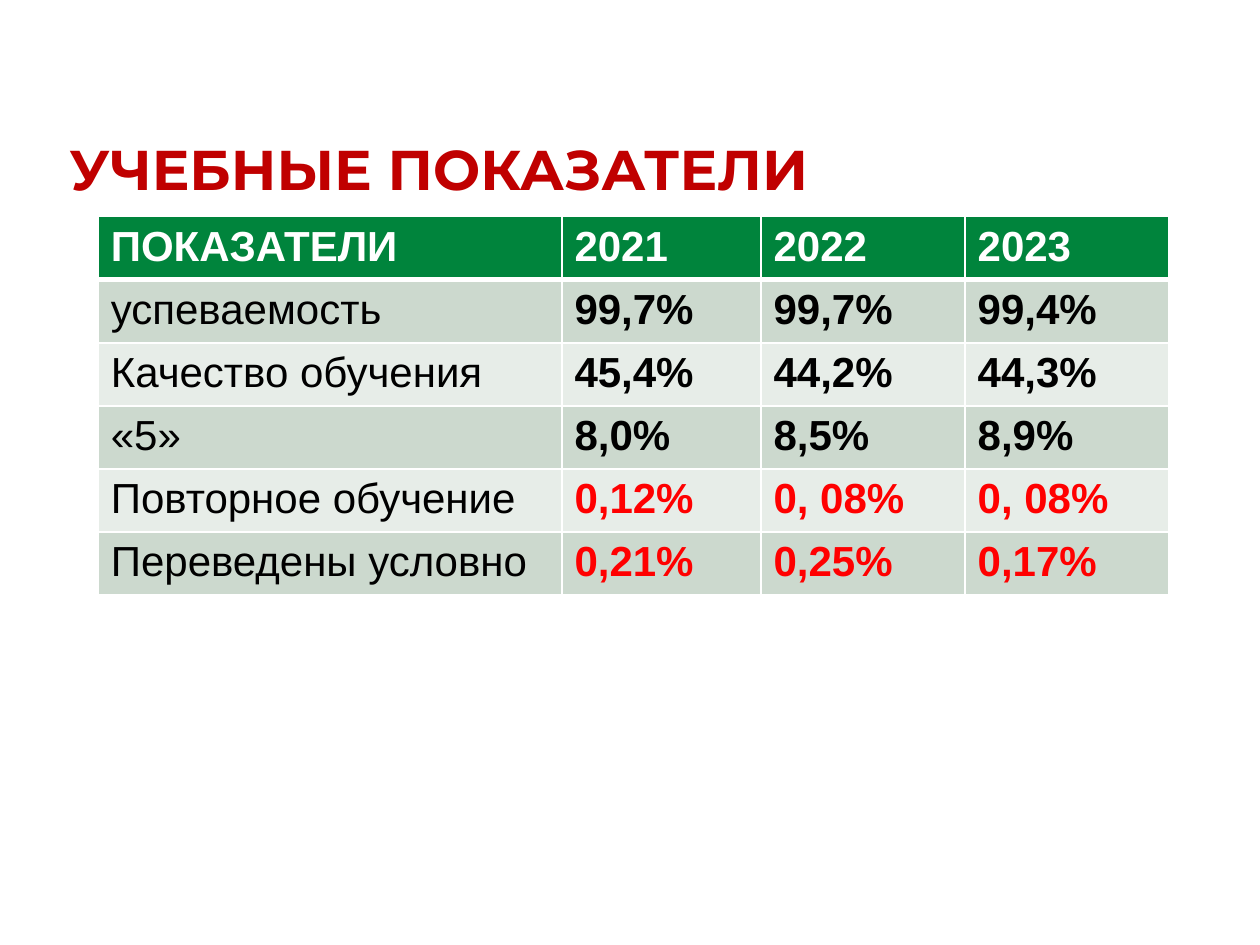
"""Build the slide of yearly study indicators with its table."""
from lxml.etree import fromstring
from pptx import Presentation
from pptx.dml.color import RGBColor as RGB
from pptx.enum.text import MSO_ANCHOR as Anchor
from pptx.util import Inches, Pt

TITLE = "УЧЕБНЫЕ ПОКАЗАТЕЛИ"
INDICATORS = [
    ("ПОКАЗАТЕЛИ", "2021", "2022", "2023"),
    ("успеваемость", "99,7%", "99,7%", "99,4%"),
    ("Качество обучения", "45,4%", "44,2%", "44,3%"),
    ("«5»", "8,0%", "8,5%", "8,9%"),
    ("Повторное обучение", "0,12%", "0, 08%", "0, 08%"),
    ("Переведены условно", "0,21%", "0,25%", "0,17%"),
]
FIRST_ALERT_ROW = 4
COLUMNS = (3.68, 1.58, 1.62, 1.62)
ROW = 0.47

CRIMSON = RGB(0xC0, 0x00, 0x00)
RED = RGB(0xFF, 0x00, 0x00)
GREEN = RGB(0x00, 0x84, 0x3C)
SAGE = RGB(0xCC, 0xD9, 0xCE)
MIST = RGB(0xE7, 0xED, 0xE8)
BLACK = RGB(0x00, 0x00, 0x00)
WHITE = RGB(0xFF, 0xFF, 0xFF)
DRAWING_NS = "http://schemas.openxmlformats.org/drawingml/2006/main"


def write(paragraph, text, color, **font_format):
    run = paragraph.add_run()
    run.text = text
    run.font.color.rgb = color
    for name, value in font_format.items():
        setattr(run.font, name, value)


def add_borders(cell, row):
    thick_edge = {0: "B", 1: "T"}.get(row)
    for position, edge in enumerate("LRTB"):
        width = Pt(3 if edge == thick_edge else 1)
        cell._tc.get_or_add_tcPr().insert(position, fromstring(
            f'<a:ln{edge} xmlns:a="{DRAWING_NS}" w="{width}"><a:solidFill>'
            f'<a:srgbClr val="{WHITE}"/></a:solidFill></a:ln{edge}>'))


def add_title(slide):
    heading = slide.shapes.add_textbox(*map(Inches, (0.5, 0.35, 7.92, 1.25))).text_frame
    frame_format = dict(word_wrap=True, vertical_anchor=Anchor.BOTTOM,
                        margin_left=Inches(0.05), margin_right=Inches(0.05),
                        margin_top=0, margin_bottom=0)
    for name, value in frame_format.items():
        setattr(heading, name, value)
    write(heading.paragraphs[0], TITLE, CRIMSON, name="Montserrat", size=Pt(32), bold=True)


def add_indicators(slide):
    bounds = (0.78, 1.72, sum(COLUMNS), ROW * len(INDICATORS))
    table = slide.shapes.add_table(len(INDICATORS), len(COLUMNS), *map(Inches, bounds)).table
    for column, width in zip(table.columns, COLUMNS):
        column.width = Inches(width)
    for row, values in enumerate(INDICATORS):
        header = row == 0
        for col, value in enumerate(values):
            cell = table.cell(row, col)
            cell.fill.solid()
            cell.fill.fore_color.rgb = GREEN if header else (MIST, SAGE)[row % 2]
            add_borders(cell, row)
            alert = row >= FIRST_ALERT_ROW and col > 0
            color = WHITE if header else RED if alert else BLACK
            write(cell.text_frame.paragraphs[0], value, color,
                  name="Arial", size=Pt(24), bold=header or col > 0)


def main():
    deck = Presentation()
    deck.slide_width, deck.slide_height = Inches(10), Inches(7.5)
    slide = deck.slides.add_slide(deck.slide_layouts[6])
    add_title(slide)
    add_indicators(slide)
    deck.save("out.pptx")


if __name__ == "__main__":
    main()
